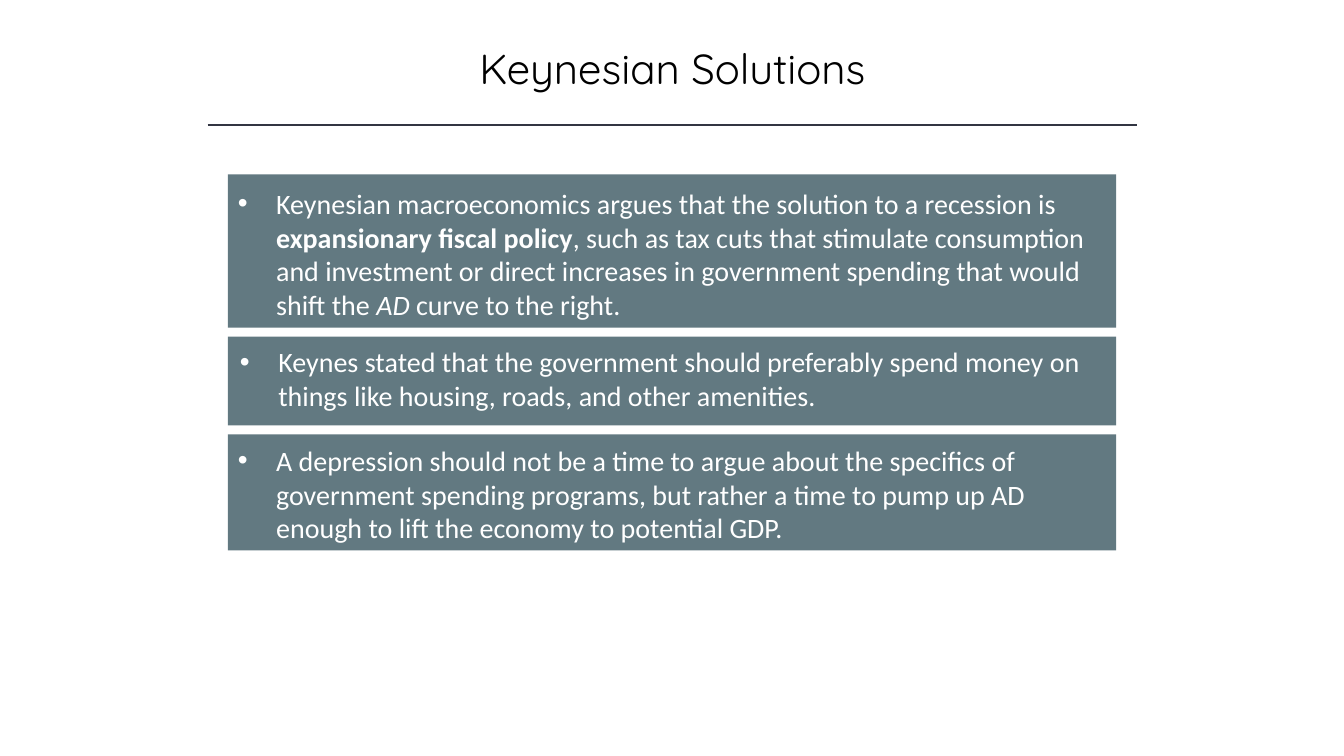
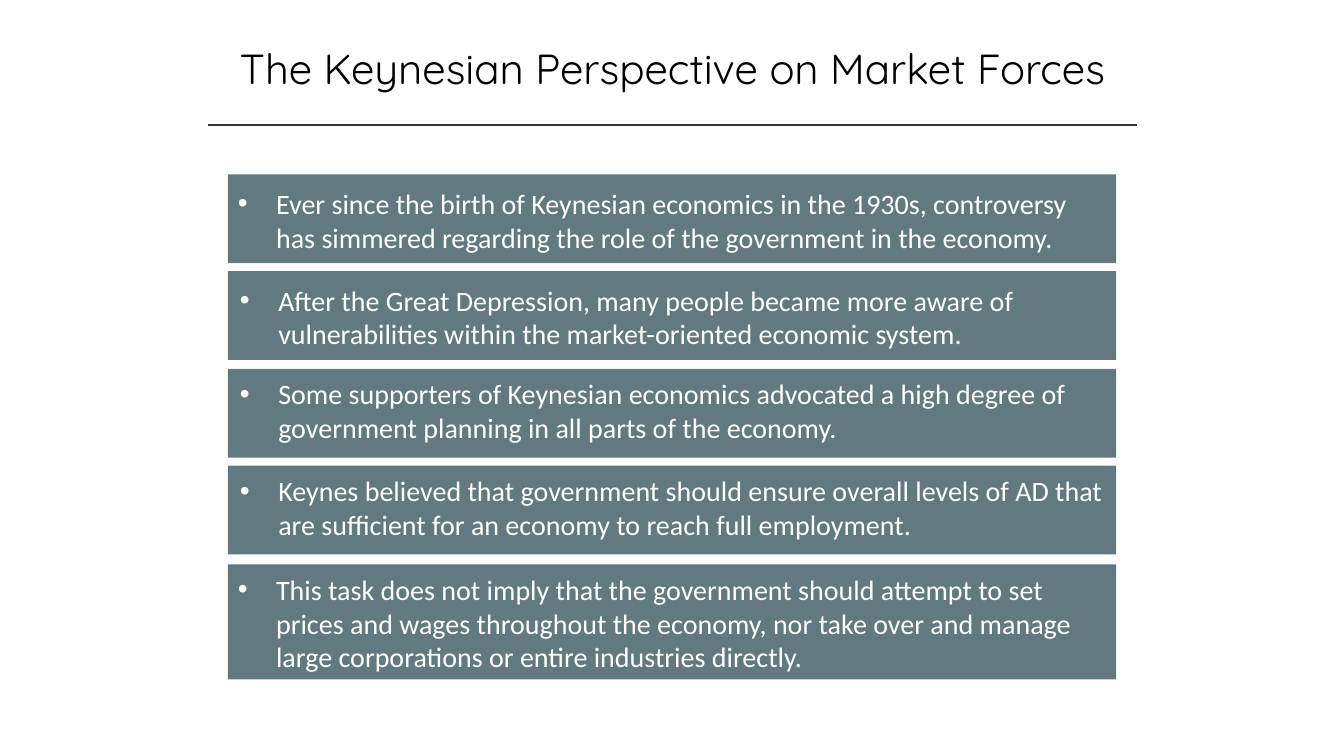
import pptx
import pptx.util
import pptx.dml.color
import pptx.enum.shapes
import pptx.enum.text
import pptx.oxml

Inches = pptx.util.Inches
Pt = pptx.util.Pt
SLATE = "627981"
RULE = "323542"
LEFT, WIDE = 2.26, 8.81
PAD = 0.1

decks = [
    ("Keynesian Solutions", [
        (1.73, 1.52, 0.12, 0, 0.27, [
            ("Keynesian macroeconomics argues that the solution to a recession is ", ""),
            ("expansionary fiscal policy", "bold"),
            (", such as tax cuts that stimulate consumption and investment or direct "
             "increases in government spending that would shift the ", ""),
            ("AD", "italic"),
            (" curve to the right.", "")]),
        (3.34, 0.88, 0.08, 0.02, PAD, [
            ("Keynes stated that the government should preferably spend money on things "
             "like housing, roads, and other amenities.", "")]),
        (4.31, 1.15, 0.09, 0, PAD, [
            ("A depression should not be a time to argue about the specifics of government "
             "spending programs, but rather a time to pump up AD enough to lift the economy "
             "to potential GDP.", "")]),
    ]),
    ("The Keynesian Perspective on Market Forces", [
        (1.73, 0.88, 0.12, 0, 0.37, [
            ("Ever since the birth of Keynesian economics in the 1930s, controversy has "
             "simmered regarding the role of the government in the economy.", "")]),
        (2.69, 0.88, 0.12, 0.02, 0.39, [
            ("After the Great Depression, many people became more aware of vulnerabilities "
             "within the market-oriented economic system.", "")]),
        (3.66, 0.88, 0.08, 0.02, PAD, [
            ("Some supporters of Keynesian economics advocated a high degree of government "
             "planning in all parts of the economy.", "")]),
        (4.62, 0.88, 0.08, 0.02, PAD, [
            ("Keynes believed that government should ensure overall levels of AD that are "
             "sufficient for an economy to reach full employment.", "")]),
        (5.6, 1.14, 0.08, 0, PAD, [
            ("This task does not imply that the government should attempt to set prices and "
             "wages throughout the economy, nor take over and manage large corporations or "
             "entire industries directly.", "")]),
    ]),
]


def color(code):
    return pptx.dml.color.RGBColor.from_string(code)


def style(run, face, size, code):
    run.font.name = face
    run.font.size = Pt(size)
    run.font.color.rgb = color(code)


show = pptx.Presentation()
show.slide_width = Inches(13.33)
show.slide_height = Inches(7.5)

for head, panels in decks:
    slide = show.slides.add_slide(show.slide_layouts[5])

    title = slide.shapes.title
    title.left, title.top = Inches(1.67), Inches(0.37)
    title.width, title.height = Inches(10), Inches(0.61)
    frame = title.text_frame
    frame.text = head
    frame.word_wrap = True
    frame.auto_size = pptx.enum.text.MSO_AUTO_SIZE.NONE
    frame.vertical_anchor = pptx.enum.text.MSO_ANCHOR.TOP
    frame.paragraphs[0].alignment = pptx.enum.text.PP_ALIGN.CENTER
    style(frame.paragraphs[0].runs[0], "Quicksand", 30, "000000")

    rule = slide.shapes.add_connector(
        pptx.enum.shapes.MSO_CONNECTOR.STRAIGHT,
        Inches(2.06), Inches(1.24), Inches(11.28), Inches(1.24))
    rule.line.color.rgb = color(RULE)
    rule.line.width = Pt(1)
    rule.element.spPr.append(pptx.oxml.parse_xml(
        '<a:effectLst xmlns:a="http://schemas.openxmlformats.org/drawingml/2006/main"/>'))

    for top, tall, drop, shift, right, parts in panels:
        panel = slide.shapes.add_shape(
            pptx.enum.shapes.MSO_SHAPE.RECTANGLE,
            Inches(LEFT), Inches(top), Inches(WIDE), Inches(tall))
        panel.shadow.inherit = False
        panel.fill.solid()
        panel.fill.fore_color.rgb = color(SLATE)
        panel.line.fill.background()

        frame = panel.text_frame
        frame.word_wrap = True
        frame.vertical_anchor = pptx.enum.text.MSO_ANCHOR.TOP
        frame.margin_left = Inches(PAD + shift)
        frame.margin_right = Inches(right)
        frame.margin_top = Inches(drop)
        frame.margin_bottom = 0

        para = frame.paragraphs[0]
        para.alignment = pptx.enum.text.PP_ALIGN.LEFT
        props = para._p.get_or_add_pPr()
        props.set("marL", str(Inches(0.38)))
        props.set("indent", str(-Inches(0.38)))
        for tag in ('buFont typeface="Arial"', 'buChar char="•"'):
            props.append(pptx.oxml.parse_xml(
                f'<a:{tag} xmlns:a="http://schemas.openxmlformats.org/drawingml/2006/main"/>'))
        for text, look in parts:
            run = para.add_run()
            run.text = text
            style(run, "Calibri", 20, "FFFFFF")
            run.font.bold = look == "bold"
            run.font.italic = look == "italic"

show.save("out.pptx")
